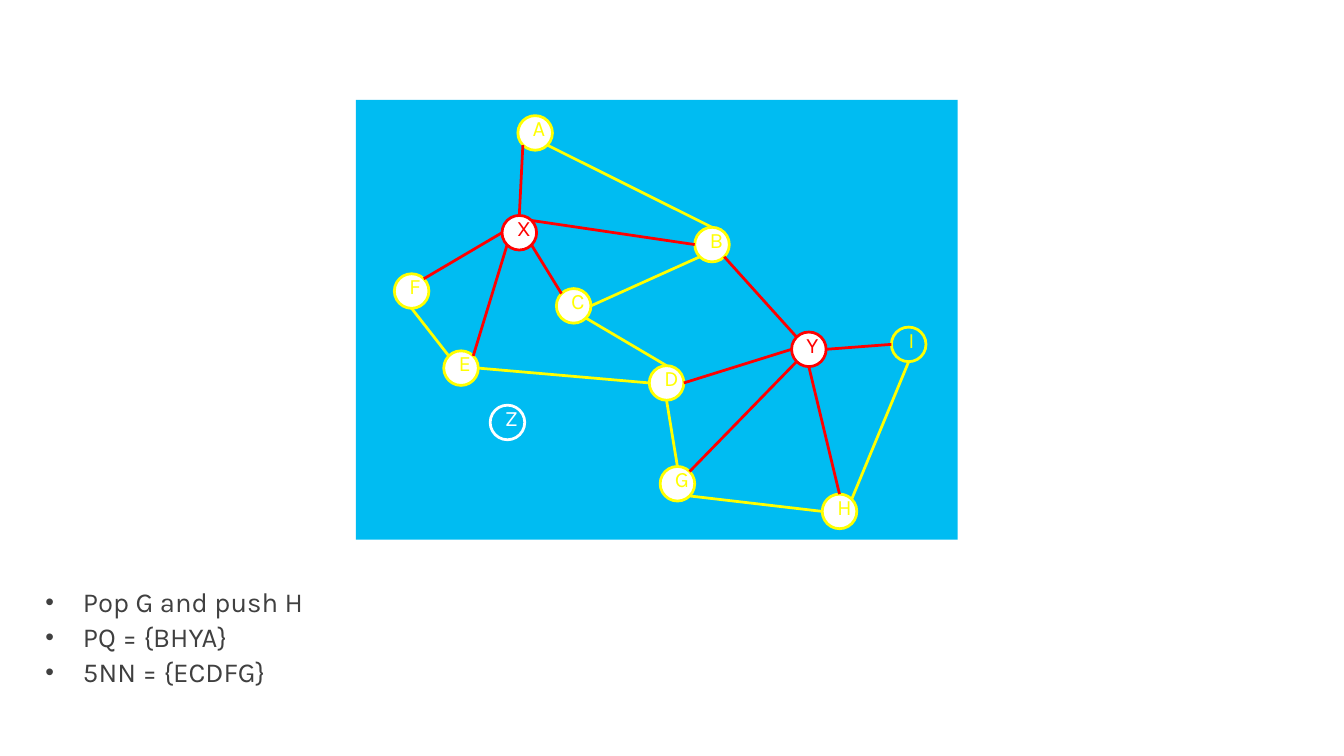
from dataclasses import dataclass
from enum import Enum
from math import sqrt

from lxml.etree import SubElement
from pptx import Presentation
from pptx.dml.color import RGBColor
from pptx.enum.shapes import MSO_CONNECTOR, MSO_SHAPE
from pptx.enum.text import MSO_ANCHOR, MSO_AUTO_SIZE, PP_ALIGN
from pptx.oxml.ns import qn
from pptx.slide import Slide
from pptx.util import Inches, Pt

WHITE = RGBColor(0xFF, 0xFF, 0xFF)
YELLOW = RGBColor(0xFF, 0xFF, 0x00)
RED = RGBColor(0xFF, 0x00, 0x00)
SKY = RGBColor(0x00, 0xBC, 0xF2)
GREY = RGBColor(0x40, 0x40, 0x40)

FONT = "Karla"
DIAMETER = 0.35
STROKE = Pt(2)
DIAGONAL = 1 / sqrt(2)


class Side(Enum):
    TOP = (0, -1)
    BOTTOM = (0, 1)
    LEFT = (-1, 0)
    RIGHT = (1, 0)
    TOP_LEFT = (-DIAGONAL, -DIAGONAL)
    TOP_RIGHT = (DIAGONAL, -DIAGONAL)
    BOTTOM_LEFT = (-DIAGONAL, DIAGONAL)
    BOTTOM_RIGHT = (DIAGONAL, DIAGONAL)


@dataclass(frozen=True)
class Node:
    left: float
    top: float
    color: RGBColor = YELLOW
    filled: bool = True

    def point(self, side: Side) -> tuple[int, int]:
        dx, dy = side.value
        radius = DIAMETER / 2
        return (Inches(self.left + radius * (1 + dx)),
                Inches(self.top + radius * (1 + dy)))


@dataclass(frozen=True)
class Edge:
    start: str
    start_side: Side
    end: str
    end_side: Side


NODES = {
    "B": Node(7.03, 2.3),
    "G": Node(6.68, 4.72),
    "E": Node(4.49, 3.55),
    "A": Node(5.24, 1.17),
    "F": Node(3.99, 2.77),
    "X": Node(5.08, 2.18, RED),
    "I": Node(9.02, 3.31, filled=False),
    "Y": Node(8.01, 3.36, RED),
    "D": Node(6.57, 3.7),
    "C": Node(5.63, 2.92),
    "Z": Node(4.96, 4.1, WHITE, filled=False),
    "H": Node(8.32, 5),
}

EDGES = [
    Edge("X", Side.BOTTOM_RIGHT, "C", Side.TOP_LEFT),
    Edge("Y", Side.RIGHT, "I", Side.LEFT),
    Edge("C", Side.RIGHT, "B", Side.BOTTOM_LEFT),
    Edge("A", Side.BOTTOM_RIGHT, "B", Side.TOP),
    Edge("F", Side.BOTTOM, "E", Side.TOP_LEFT),
    Edge("G", Side.TOP, "D", Side.BOTTOM),
    Edge("F", Side.TOP_RIGHT, "X", Side.LEFT),
    Edge("X", Side.TOP, "A", Side.BOTTOM_LEFT),
    Edge("E", Side.TOP_RIGHT, "X", Side.BOTTOM_LEFT),
    Edge("X", Side.TOP_RIGHT, "B", Side.LEFT),
    Edge("E", Side.RIGHT, "D", Side.LEFT),
    Edge("C", Side.BOTTOM_RIGHT, "D", Side.TOP),
    Edge("D", Side.RIGHT, "Y", Side.LEFT),
    Edge("B", Side.BOTTOM_RIGHT, "Y", Side.TOP_LEFT),
    Edge("G", Side.TOP_RIGHT, "Y", Side.BOTTOM_LEFT),
    Edge("Y", Side.BOTTOM, "H", Side.TOP),
    Edge("H", Side.TOP_RIGHT, "I", Side.BOTTOM),
    Edge("G", Side.BOTTOM_RIGHT, "H", Side.LEFT),
]

STEPS = ["Pop G and push H", "PQ = {BHYA}", "5NN = {ECDFG}"]


def write_steps(slide: Slide) -> None:
    body = slide.placeholders[1]
    body.left, body.top = Inches(0.3), Inches(5.86)
    body.width, body.height = Inches(13), Inches(1.25)
    frame = body.text_frame
    frame.word_wrap = True
    frame.auto_size = MSO_AUTO_SIZE.SHAPE_TO_FIT_TEXT
    frame.vertical_anchor = MSO_ANCHOR.TOP
    frame.margin_left = frame.margin_right = Inches(0.16)
    frame.margin_top = frame.margin_bottom = Inches(0.1)
    frame.text = "\n".join(STEPS)
    for index, step in enumerate(frame.paragraphs):
        properties = step._p.get_or_add_pPr()
        properties.set("marL", str(Inches(0.38)))
        properties.set("indent", str(-Inches(0.38)))
        SubElement(properties, qn("a:buSzPct"), val="90000")
        SubElement(properties, qn("a:buFont"), typeface="Arial")
        SubElement(properties, qn("a:buChar"), char="•")
        step.line_spacing = 0.9
        step.space_before = Pt(4 if index else 0)
        step.font.name = FONT
        step.font.size = Pt(20)
        step.font.color.rgb = GREY


def draw_map(slide: Slide) -> None:
    area = slide.shapes.add_shape(
        MSO_SHAPE.RECTANGLE, Inches(3.6), Inches(1.01), Inches(6.09), Inches(4.45))
    area.shadow.inherit = False
    area.fill.solid()
    area.fill.fore_color.rgb = SKY
    area.line.fill.background()


def draw_node(slide: Slide, letter: str, node: Node) -> None:
    circle = slide.shapes.add_shape(
        MSO_SHAPE.OVAL, Inches(node.left), Inches(node.top),
        Inches(DIAMETER), Inches(DIAMETER))
    circle.shadow.inherit = False
    if node.filled:
        circle.fill.solid()
        circle.fill.fore_color.rgb = WHITE
    else:
        circle.fill.background()
    circle.line.color.rgb = node.color
    circle.line.width = STROKE
    frame = circle.text_frame
    frame.vertical_anchor = MSO_ANCHOR.BOTTOM
    frame.margin_left = frame.margin_top = Inches(0.1)
    frame.margin_right = frame.margin_bottom = Inches(0.04)
    label = frame.paragraphs[0]
    label.text = letter
    label.alignment = PP_ALIGN.CENTER
    label.font.name = FONT
    label.font.size = Pt(16)
    label.font.color.rgb = node.color


def draw_edge(slide: Slide, edge: Edge) -> None:
    start, end = NODES[edge.start], NODES[edge.end]
    link = slide.shapes.add_connector(
        MSO_CONNECTOR.STRAIGHT,
        *start.point(edge.start_side), *end.point(edge.end_side))
    link.line.color.rgb = RED if RED in (start.color, end.color) else YELLOW
    link.line.width = STROKE
    SubElement(link._element.spPr, qn("a:effectLst"))


def main() -> None:
    deck = Presentation()
    deck.slide_width, deck.slide_height = Inches(13.6), Inches(7.65)
    slide = deck.slides.add_slide(deck.slide_layouts[1])
    title = slide.shapes.title.element
    title.getparent().remove(title)
    write_steps(slide)
    draw_map(slide)
    for letter, node in NODES.items():
        draw_node(slide, letter, node)
    for edge in EDGES:
        draw_edge(slide, edge)
    deck.save("out.pptx")


if __name__ == "__main__":
    main()
